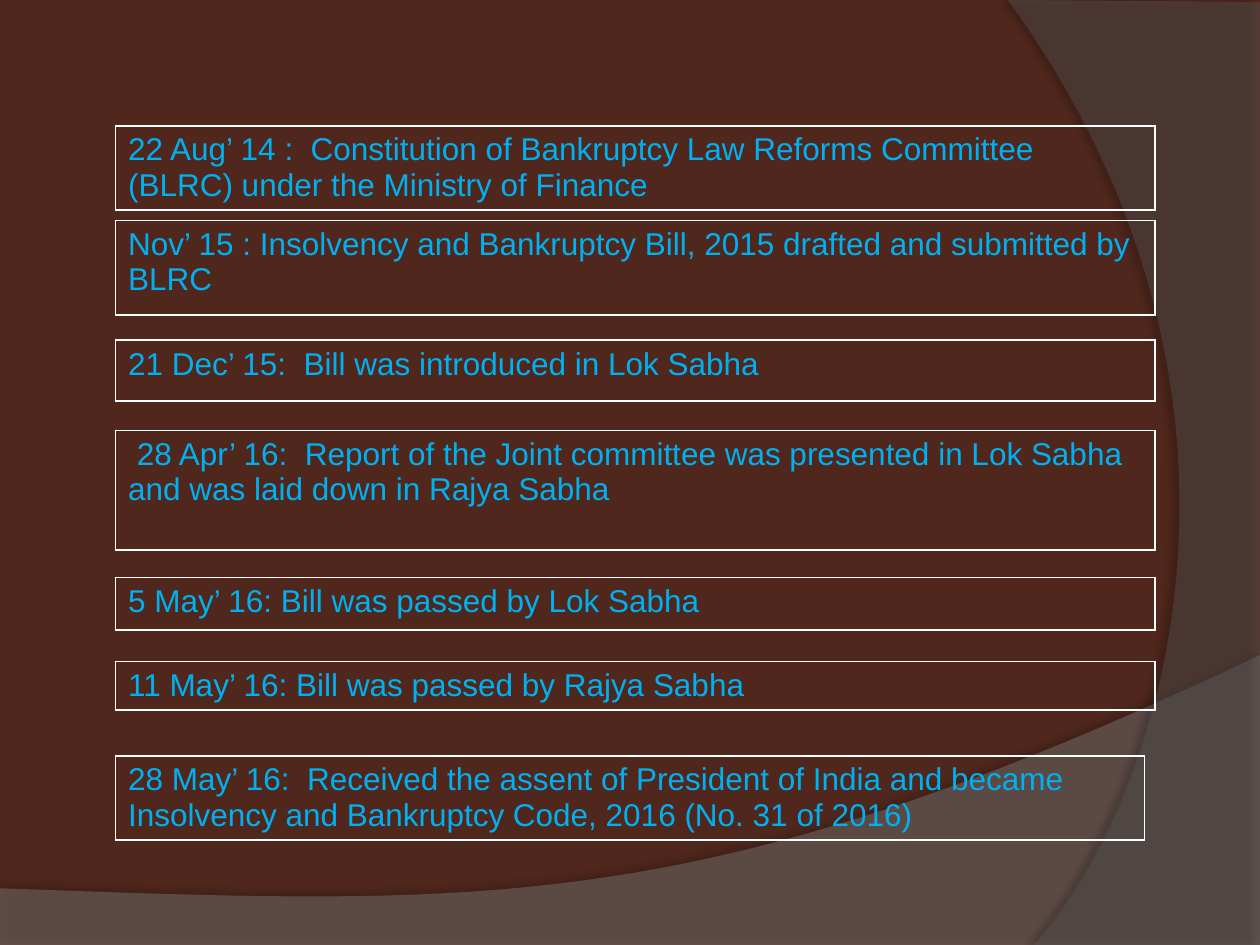
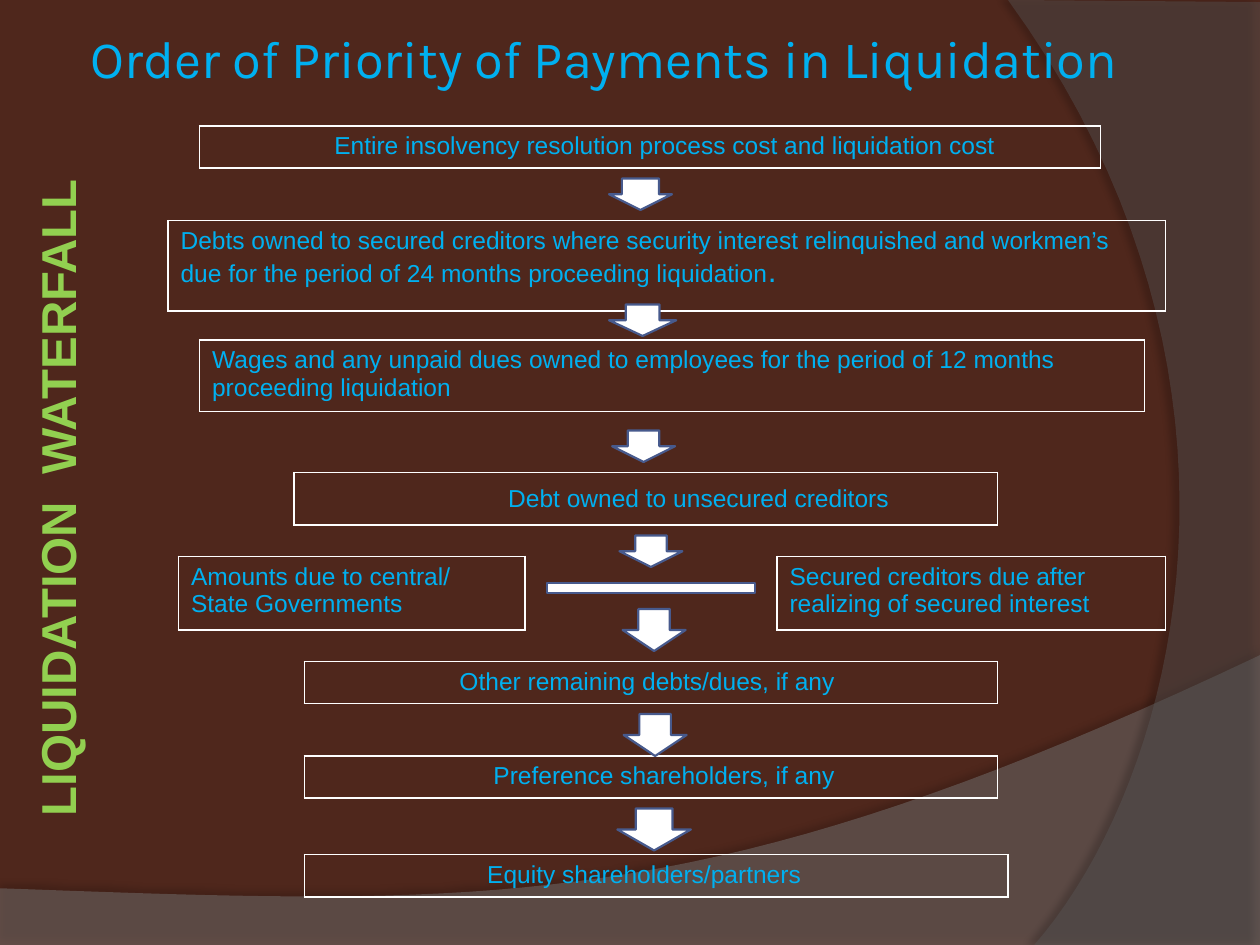
from dataclasses import dataclass

from lxml import etree
from pptx import Presentation
from pptx.dml.color import RGBColor
from pptx.enum.shapes import MSO_SHAPE
from pptx.enum.text import MSO_ANCHOR, PP_ALIGN
from pptx.oxml.ns import qn
from pptx.util import Emu, Inches, Pt

DOWN_ARROW, MINUS = MSO_SHAPE.DOWN_ARROW, MSO_SHAPE.MATH_MINUS
MIDDLE, TOP = MSO_ANCHOR.MIDDLE, MSO_ANCHOR.TOP
LEFT, CENTER = PP_ALIGN.LEFT, PP_ALIGN.CENTER

COLUMNS, ROWS = 120, 90
CURVE_STEPS = 40


@dataclass(frozen=True)
class Theme:
    ground: str = "4F271C"
    hill: str = "7B7B7B"
    arc: str = "5A5A5A"
    shadow: str = "000000"
    text: str = "00B0F0"
    accent: str = "92D050"
    border: str = "FFFFFF"
    marker: str = "FFFFFF"
    marker_line: str = "475A8D"
    body_font: str = "Arial"
    title_font: str = "Karla"
    title_size: float = 30
    side_size: float = 28
    event_size: float = 18
    step_size: float = 14
    border_width: float = 1
    marker_width: float = 1.25


def bezier(start, control_1, control_2, end):
    """Return points along a cubic curve, without its start."""
    points = []
    for step in range(1, CURVE_STEPS + 1):
        t = step / CURVE_STEPS
        weights = ((1 - t) ** 3, 3 * t * (1 - t) ** 2, 3 * t * t * (1 - t), t ** 3)
        corners = (start, control_1, control_2, end)
        points.append(tuple(sum(w * c[axis] for w, c in zip(weights, corners))
                            for axis in (0, 1)))
    return points


def add_alpha(color_node, opacity):
    etree.SubElement(color_node, qn("a:alpha"), val=str(opacity * 1000))


class Deck:
    """Holds the theme and the current slide; lengths are grid columns and rows."""

    def __init__(self, theme):
        self.theme = theme
        self.prs = Presentation()
        self.prs.slide_width, self.prs.slide_height = Inches(10), Inches(7.5)
        self.column = self.prs.slide_width / COLUMNS
        self.row = self.prs.slide_height / ROWS
        self.slide = None

    def area(self, left, top, width, height):
        return (Emu(round(left * self.column)), Emu(round(top * self.row)),
                Emu(round(width * self.column)), Emu(round(height * self.row)))

    def new_slide(self):
        theme = self.theme
        self.slide = self.prs.slides.add_slide(self.prs.slide_layouts[6])
        ground = self.slide.background.fill
        ground.solid()
        ground.fore_color.rgb = RGBColor.from_string(theme.ground)

        hill_curve = bezier((120, 62.4), (67.1, 87.5), (46.9, 86.3), (0, 84.6))
        self.swoosh([(0, 84.6), (0, 90), (120, 90), (120, 62.4)] + hill_curve,
                    theme.hill, 45, shadow=(35, 4, 3.5, 270))
        arc_curve = bezier((98.5, 90), (112.2, 74.3), (122.2, 36), (96, 0))
        self.swoosh([(120, 0.2), (120, 90), (98.5, 90)] + arc_curve,
                    theme.arc, 40, shadow=(45, 4, 4, 180))

    def swoosh(self, points, color, opacity, shadow):
        """Draw a translucent outline; shadow is opacity, blur, distance, angle."""
        scaled = [(x * self.column, y * self.row) for x, y in points]
        builder = self.slide.shapes.build_freeform(*scaled[0], scale=1.0)
        builder.add_line_segments(scaled[1:], close=True)
        shape = builder.convert_to_shape()
        shape.fill.solid()
        shape.fill.fore_color.rgb = RGBColor.from_string(color)
        add_alpha(shape._element.spPr.find(qn("a:solidFill"))[0], opacity)
        shape.line.fill.background()
        shape.shadow.inherit = False
        strength, blur, distance, angle = shadow
        effects = shape._element.spPr.find(qn("a:effectLst"))
        outer = etree.SubElement(effects, qn("a:outerShdw"), blurRad=str(Pt(blur)),
                                 dist=str(Pt(distance)), dir=str(angle * 60000),
                                 algn="ctr", rotWithShape="0")
        add_alpha(etree.SubElement(outer, qn("a:srgbClr"), val=self.theme.shadow),
                  strength)

    def style(self, run, size, color, font, bold=False):
        run.font.size, run.font.name, run.font.bold = Pt(size), font, bold
        run.font.color.rgb = RGBColor.from_string(color)

    def fill_text(self, frame, text, size, color, font, bold=False, align=LEFT):
        frame.text = text
        frame.word_wrap = True
        for paragraph in frame.paragraphs:
            paragraph.alignment = align
            for run in paragraph.runs:
                self.style(run, size, color, font, bold)

    def label(self, text, area, size, color, font, anchor=TOP, align=LEFT,
              bold=False, rotation=0, side_inset=0.1):
        holder = self.slide.shapes.add_textbox(*self.area(*area))
        holder.rotation = rotation
        frame = holder.text_frame
        self.fill_text(frame, text, size, color, font, bold, align)
        frame.vertical_anchor = anchor
        frame.margin_left = frame.margin_right = Inches(side_inset)

    def box(self, text, area, size, indent=0, top_inset=0.05):
        """Add a one-cell outlined table, indent in inches; return its text frame."""
        theme = self.theme
        table = self.slide.shapes.add_table(1, 1, *self.area(*area)).table
        table.first_row = table.horz_banding = False
        cell = table.cell(0, 0)
        cell.margin_left = cell.margin_right = Inches(0.1)
        cell.margin_top, cell.margin_bottom = Inches(top_inset), Inches(0.05)
        properties = cell._tc.get_or_add_tcPr()
        for side in ("lnL", "lnR", "lnT", "lnB"):
            edge = etree.SubElement(properties, qn(f"a:{side}"),
                                    w=str(Pt(theme.border_width)))
            edge_fill = etree.SubElement(edge, qn("a:solidFill"))
            etree.SubElement(edge_fill, qn("a:srgbClr"), val=theme.border)
        cell.fill.background()
        self.fill_text(cell.text_frame, text, size, theme.text, theme.body_font)
        if indent:
            paragraph = cell.text_frame.paragraphs[0]
            paragraph._p.get_or_add_pPr().set("marL", str(Inches(indent)))
        return cell.text_frame

    def marker(self, kind, area, *adjustments):
        shape = self.slide.shapes.add_shape(kind, *self.area(*area))
        shape.shadow.inherit = False
        for index, value in enumerate(adjustments):
            shape.adjustments[index] = value
        shape.fill.solid()
        shape.fill.fore_color.rgb = RGBColor.from_string(self.theme.marker)
        shape.line.color.rgb = RGBColor.from_string(self.theme.marker_line)
        shape.line.width = Pt(self.theme.marker_width)


def build_timeline(deck):
    # text, top, width, height
    events = [
        ("22 Aug’ 14 :  Constitution of Bankruptcy Law Reforms Committee "
         "(BLRC) under the Ministry of Finance", 12, 99, 8),
        ("Nov’ 15 : Insolvency and Bankruptcy Bill, 2015 drafted and submitted "
         "by BLRC", 21, 99, 9),
        ("21 Dec’ 15:  Bill was introduced in Lok Sabha", 32.4, 99, 5.8),
        (" 28 Apr’ 16:  Report of the Joint committee was presented in Lok Sabha "
         "and was laid down in Rajya Sabha", 41, 99, 11.4),
        ("5 May’ 16: Bill was passed by Lok Sabha", 55, 99, 5),
        ("11 May’ 16: Bill was passed by Rajya Sabha", 63, 99, 4.6),
        ("28 May’ 16:  Received the assent of President of India and became "
         "Insolvency and Bankruptcy Code, 2016 (No. 31 of 2016)", 72, 98, 8),
    ]
    deck.new_slide()
    for text, top, width, height in events:
        deck.box(text, (11, top, width, height), deck.theme.event_size)


def build_waterfall(deck):
    theme = deck.theme
    deck.new_slide()
    deck.label("Order of Priority of Payments in Liquidation", (8, 0, 106, 11),
               theme.title_size, theme.text, theme.title_font,
               anchor=MIDDLE, side_inset=0.05)

    secured = deck.box(
        "Debts owned to secured creditors where security interest relinquished "
        "and workmen’s\ndue for the period of 24 months proceeding liquidation",
        (16, 21, 95, 8.6), theme.step_size)
    full_stop = secured.paragraphs[1].add_run()
    full_stop.text = "."
    deck.style(full_stop, theme.event_size, theme.text, theme.body_font)

    # text, area, indent, top inset
    steps = [
        ("Entire insolvency resolution process cost and liquidation cost",
         (19, 12, 85.8, 4), 0.97, 0.05),
        ("Wages and any unpaid dues owned to employees for the period of 12 months "
         "proceeding liquidation", (19, 32.4, 90, 6.5), 0, 0.05),
        ("Debt owned to unsecured creditors", (28, 45, 67, 5), 1.6, 0.1),
        ("Amounts due to central/ State Governments", (17, 53, 33, 7), 0, 0.05),
        ("Secured creditors due after realizing of secured interest",
         (74, 53, 37, 7), 0, 0.05),
        ("Other remaining debts/dues, if any", (29, 63, 66, 4), 1.13, 0.05),
        ("Preference shareholders, if any", (29, 72, 66, 4), 1.4, 0.05),
        ("Equity shareholders/partners", (29, 81.4, 67, 3.9), 1.35, 0.05),
    ]
    for text, area, indent, top_inset in steps:
        deck.box(text, area, theme.step_size, indent, top_inset)

    # left, top, width, height, shaft share
    arrows = [
        (58, 17, 6, 3, 0.59), (58, 29, 6.4, 3, 0.5), (58.3, 41, 6, 3, 0.5),
        (59, 51, 6, 3, 0.5), (59.3, 58, 6, 4, 0.5), (59.4, 68, 6, 4, 0.5),
        (58.8, 77, 7, 4, 0.5),
    ]
    for *area, shaft in arrows:
        deck.marker(DOWN_ARROW, area, shaft, 0.5)
    deck.marker(MINUS, (48.5, 54, 27, 4), 0.24)

    deck.label("LIQUIDATION  WATERFALL", (-29.5, 43.4, 71, 8), theme.side_size,
               theme.accent, theme.body_font, align=CENTER, bold=True, rotation=270)


def main():
    deck = Deck(Theme())
    build_timeline(deck)
    build_waterfall(deck)
    deck.prs.save("out.pptx")


if __name__ == "__main__":
    main()
